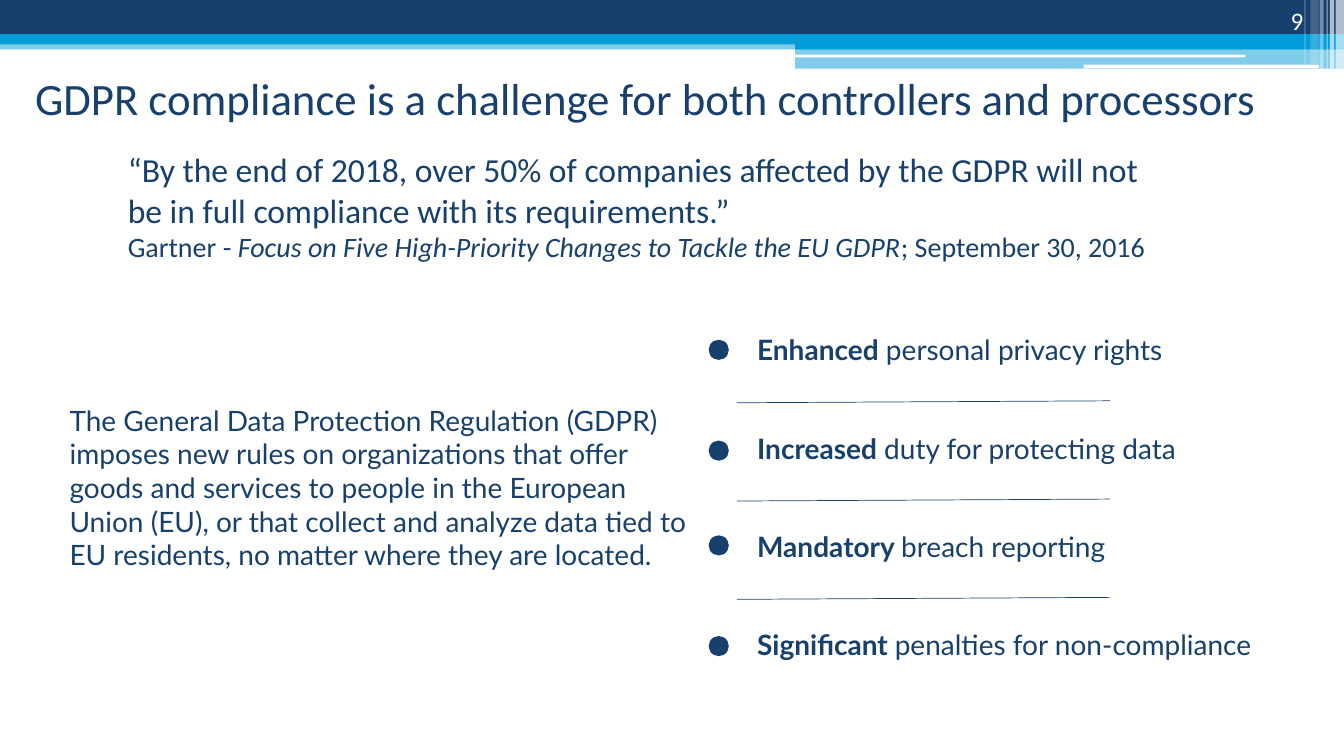
import pptx
import pptx.util
import pptx.dml.color
import pptx.enum.shapes
import pptx.enum.text
import pptx.oxml
import pptx.oxml.ns
import lxml.etree

Pt = pptx.util.Pt
RGB = pptx.dml.color.RGBColor
SHAPE = pptx.enum.shapes.MSO_SHAPE
ANCHOR = pptx.enum.text.MSO_ANCHOR
ALIGN = pptx.enum.text.PP_ALIGN
qn = pptx.oxml.ns.qn

NAVY = RGB(0x17, 0x40, 0x6D)
BLUE = RGB(0x00, 0x9D, 0xD9)
WHITE = RGB(0xFF, 0xFF, 0xFF)

WIDE, HIGH = 960, 540
PAD = (14.4, 11.5)


def add_form(slide, kind, box, color, alpha=100):
    form = slide.shapes.add_shape(kind, *map(Pt, box))
    form.shadow.inherit = False
    form.fill.solid()
    form.fill.fore_color.rgb = color
    form.line.fill.background()
    if alpha < 100:
        tint = form.fill._xPr.find(qn("a:solidFill"))[0]
        lxml.etree.SubElement(tint, qn("a:alpha"), val=str(alpha * 1000))
    return form


def add_text(slide, box, paras, font, color=NAVY, pad=(7.2, 3.6),
             anchor=ANCHOR.TOP, align=ALIGN.LEFT, space=None):
    frame = slide.shapes.add_textbox(*map(Pt, box)).text_frame
    frame.word_wrap = True
    frame.vertical_anchor = anchor
    frame.margin_left = frame.margin_right = Pt(pad[0])
    frame.margin_top = frame.margin_bottom = Pt(pad[1])
    for num, (size, runs) in enumerate(paras):
        para = frame.add_paragraph() if num else frame.paragraphs[0]
        para.alignment = align
        if space:
            para.line_spacing = space
        for words, style in runs:
            run = para.add_run()
            run.text = words
            run.font.name = font
            run.font.size = Pt(size)
            run.font.color.rgb = color
            run.font.bold = style == "bold"
            run.font.italic = style == "italic"


def add_rule(slide, start, end):
    rule = slide.shapes.add_connector(
        pptx.enum.shapes.MSO_CONNECTOR.STRAIGHT, *map(Pt, start + end))
    rule.line.color.rgb = NAVY
    rule.line.width = Pt(0.5)
    lxml.etree.SubElement(rule._element.spPr, qn("a:effectLst"))


def draw_band(slide, box, page):
    left, top, width, height = box
    half = left + 568
    right = left + width
    bars = [
        (left, 28.8, width, 6.5, BLUE, 50),
        (left, 0, width, 24.5, NAVY, 100),
        (left, 24.5, width, 7.2, BLUE, 100),
        (half, 28.1, right - half, 7.2, BLUE, 100),
        (half, 34.8, right - half, 14.2, BLUE, 50),
    ]
    for x, y, w, h, color, alpha in bars:
        add_form(slide, SHAPE.RECTANGLE, (x, top + y, w, h), color, alpha)
    for x, y, w, h in [(half - 0.5, 39, 322, 2), (left + 774, 46.2, 168, 2.7)]:
        add_form(slide, SHAPE.ROUNDED_RECTANGLE, (x, top + y, w, h), WHITE)
    strips = [(6, 6, height, 65), (10, 3, height, 65), (12.4, 0.8, height, 60),
              (17.3, 2.9, height, 40), (24, 6, 46, 20), (28.2, 0.8, 46, 30)]
    for back, w, h, alpha in strips:
        add_form(slide, SHAPE.RECTANGLE, (right - back, top, w, h), WHITE, alpha)
    add_text(slide, (right - 101.8, top, 80, 28.8), [(18, [(page, None)])],
             "Calibri", WHITE, anchor=ANCHOR.BOTTOM, align=ALIGN.RIGHT)


def draw_title(slide, box, words):
    add_text(slide, box, [(32, [(words, None)])], "Calibri",
             anchor=ANCHOR.MIDDLE)


def draw_quote(slide, box, quote, source):
    add_text(slide, box, [(24, [(quote, None)]), (20, source)], "Calibri")


def draw_intro(slide, box, words):
    add_text(slide, box, [(20, [(words, None)])], "Lato", pad=PAD)


def draw_points(slide, box, points):
    left, top, width, height = box
    pitch = height / len(points)
    edge = left + 20.2
    for num, (strong, rest, drop) in enumerate(points):
        y = top + num * pitch
        add_form(slide, SHAPE.OVAL, (left, y + drop, 14.4, 14.4), NAVY)
        add_text(slide, (edge, y, width - 20.2, 45.4),
                 [(20, [(strong, "bold"), (rest, None)])], "Lato",
                 pad=PAD, space=0.9)
        if num < len(points) - 1:
            add_rule(slide, (edge, y + 58), (edge + 266.4, y + 56.6))


def main():
    deck = pptx.Presentation()
    deck.slide_width, deck.slide_height = Pt(WIDE), Pt(HIGH)
    slide = deck.slides.add_slide(deck.slide_layouts[6])
    draw_band(slide, (0, 0, WIDE, 49), "9")
    draw_title(slide, (18, 36.7, 920, 66.2),
               "GDPR compliance is a challenge for both controllers and processors")
    draw_quote(
        slide, (84.2, 103, 764.6, 90),
        "“By the end of 2018, over 50% of companies affected by the GDPR "
        "will not be in full compliance with its requirements.”",
        [("Gartner - ", None),
         ("Focus on Five High-Priority Changes to Tackle the EU GDPR", "italic"),
         ("; September 30, 2016", None)])
    draw_intro(
        slide, (35.3, 276.5, 470.9, 144),
        "The General Data Protection Regulation (GDPR) imposes new rules on "
        "organizations that offer goods and services to people in the European "
        "Union (EU), or that collect and analyze data tied to EU residents, "
        "no matter where they are located.")
    draw_points(slide, (506.2, 229.7, 432, 280.8), [
        ("Enhanced", " personal privacy rights", 13),
        ("Increased", " duty for protecting data", 14.8),
        ("Mandatory ", "breach reporting", 12.3),
        ("Significant ", "penalties for non-compliance", 14),
    ])
    deck.save("out.pptx")


if __name__ == "__main__":
    main()
